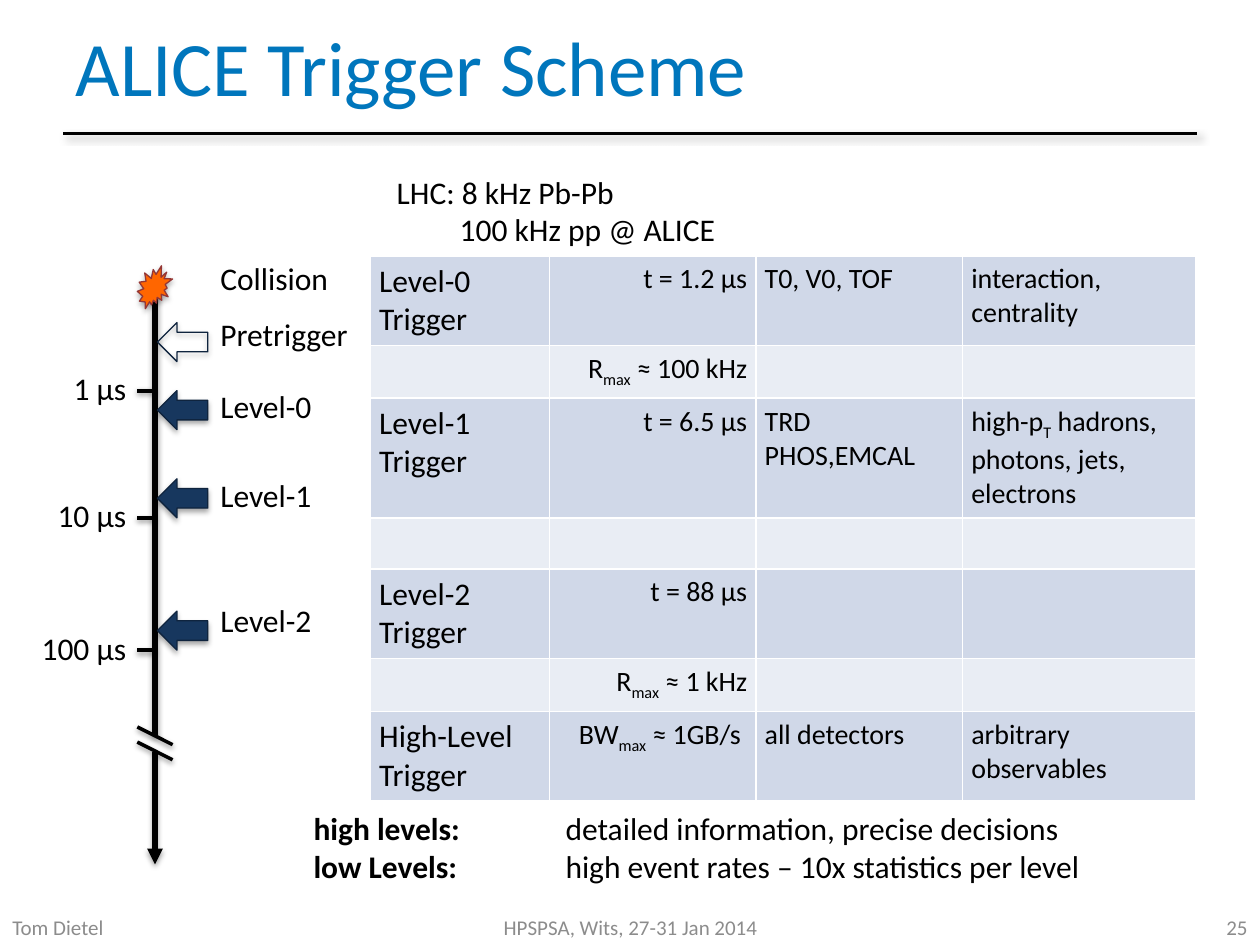
"""Build the ALICE trigger scheme slide with a timeline and a level table."""
from lxml.etree import SubElement
from pptx import Presentation
from pptx.dml.color import RGBColor
from pptx.enum.shapes import MSO_CONNECTOR, MSO_SHAPE
from pptx.enum.text import MSO_ANCHOR, MSO_AUTO_SIZE, PP_ALIGN
from pptx.oxml.ns import qn
from pptx.util import Inches, Pt

LEFT, CENTER, RIGHT = PP_ALIGN.LEFT, PP_ALIGN.CENTER, PP_ALIGN.RIGHT
BLACK, GRAY, BLUE, NAVY, WHITE = "000000", "8C8C8C", "0076BC", "17375E", "FFFFFF"
BANDS = ("D0D8E8", "E9EDF4")
SUBSCRIPT, BOLD = "subscript", "bold"
LINE_SHADOW = (38, 3.1, 1.6, 90)
SHAPE_SHADOW = (35, 3.1, 1.8, 90)
RULE_SHADOW = (40, 4, 3, 45)

COLUMNS = (1.42, 1.64, 1.64, 1.85)
ROWS = (0.65, 0.42, 0.95, 0.37, 0.65, 0.42, 0.67)
CELLS = (
    ("Level-0 Trigger", " t = 1.2 μs", "T0, V0, TOF", "interaction,\vcentrality"),
    ("", "R_max_ ≈ 100 kHz", "", ""),
    ("Level-1 Trigger", "t = 6.5 μs", "TRD\nPHOS,EMCAL",
     "high-p_T_ hadrons, photons, jets,\nelectrons"),
    ("", "", "", ""),
    ("Level-2 Trigger", "t = 88 μs", "", ""),
    ("", "R_max_ ≈ 1 kHz", "", ""),
    ("High-Level Trigger", "BW_max_ ≈ 1GB/s ", "all detectors", "arbitrary observables"),
)
AXIS, TICK = 1.23, 0.14
TICKS = (("1 μs", 3.1), ("10 μs", 4.11), ("100 μs", 5.16))
ARROWS = ((3.1, NAVY), (2.56, None), (3.8, NAVY), (4.85, NAVY))
EVENTS = (("Collision", 2.01), ("Level-2", 4.72), ("Level-0", 3.02),
          ("Level-1", 3.73), ("Pretrigger", 2.45))
FOOTERS = (
    ("HPSPSA, Wits, 27-31 Jan 2014", (1.82, 7.22, 6.37, 0.27), CENTER),
    ("Tom Dietel", (0, 7.22, 1.7, 0.28), LEFT),
    ("25", (8.55, 7.22, 1.45, 0.27), RIGHT),
)


def color(code):
    """Turn a hex string into a colour."""
    return RGBColor.from_string(code)


def assign(target, values):
    """Set each named attribute on the target."""
    for name, value in values.items():
        setattr(target, name, value)


class Painter:
    """Hold the style and the current slide, and draw each kind of element."""

    font = "Calibri"

    def __init__(self, page):
        """Start drawing directly on the page."""
        self.page = page
        self.shapes = page.shapes

    def group(self):
        """Send the elements that follow into a new group."""
        self.shapes = self.page.shapes.add_group_shape().shapes

    def ungroup(self):
        """Send the elements that follow to the page."""
        self.shapes = self.page.shapes

    def fill_text(self, frame, text, size=18, ink=BLACK, align=LEFT, accent=BOLD, tabs=()):
        """Fill a frame, giving the accent to the parts between underscores."""
        for index, line in enumerate(text.split("\n")):
            para = frame.paragraphs[0] if index == 0 else frame.add_paragraph()
            para.alignment = align
            if tabs:
                stops = SubElement(para._p.get_or_add_pPr(), qn("a:tabLst"))
                for stop in tabs:
                    SubElement(stops, qn("a:tab"), pos=str(Inches(stop)), algn="l")
            for order, piece in enumerate(line.split("_")):
                for part_index, part in enumerate(piece.split("\v")):
                    if part_index:
                        para.add_line_break()
                    if part:
                        span = para.add_run()
                        span.text = part
                        assign(span.font, {"name": self.font, "size": Pt(size)})
                        span.font.color.rgb = color(ink)
                        if order % 2 and accent == BOLD:
                            span.font.bold = True
                        elif order % 2:
                            span.font._element.set("baseline", "-25000")

    def shadow(self, item, look):
        """Give an item an outer shadow."""
        alpha, blur, distance, angle = look
        effects = SubElement(item._element.spPr, qn("a:effectLst"))
        outer = SubElement(effects, qn("a:outerShdw"), blurRad=str(Pt(blur)),
                           dist=str(Pt(distance)), dir=str(angle * 60000), rotWithShape="0")
        ink = SubElement(outer, qn("a:srgbClr"), val=BLACK)
        SubElement(ink, qn("a:alpha"), val=str(alpha * 1000))

    def title(self, text, place):
        """Place and fill the title placeholder."""
        box = self.page.shapes.title
        assign(box, dict(zip(("left", "top", "width", "height"), map(Inches, place))))
        box.text_frame.vertical_anchor = MSO_ANCHOR.MIDDLE
        self.fill_text(box.text_frame, text, 44, BLUE)

    def text(self, text, place, grow=True, **style):
        """Add a wrapped text box."""
        frame = self.shapes.add_textbox(*map(Inches, place)).text_frame
        assign(frame, {
            "word_wrap": True,
            "auto_size": MSO_AUTO_SIZE.SHAPE_TO_FIT_TEXT if grow else MSO_AUTO_SIZE.NONE,
            "vertical_anchor": MSO_ANCHOR.TOP if grow else MSO_ANCHOR.MIDDLE,
        })
        self.fill_text(frame, text, **style)

    def line(self, start, end, width, look=LINE_SHADOW, arrow=False):
        """Add a black line, with an arrowhead at its end if asked."""
        line = self.shapes.add_connector(MSO_CONNECTOR.STRAIGHT, *map(Inches, start + end))
        line.line.width = Pt(width)
        line.line.color.rgb = color(BLACK)
        if arrow:
            SubElement(line.line._get_or_add_ln(), qn("a:tailEnd"), type="triangle")
        self.shadow(line, look)

    def shape(self, kind, place, fill, outline):
        """Add a preset shape, unfilled when the fill is None."""
        shape = self.shapes.add_shape(kind, *map(Inches, place))
        if fill:
            shape.fill.solid()
            shape.fill.fore_color.rgb = color(fill)
        else:
            shape.fill.background()
        shape.line.color.rgb = color(outline)
        shape.line.width = Pt(0.75)
        self.shadow(shape, SHAPE_SHADOW)

    def table(self, cells, place, columns, rows):
        """Add a table with banded fills and white borders."""
        table = self.shapes.add_table(len(rows), len(columns), *map(Inches, place)).table
        assign(table, {"first_row": False, "horz_banding": False})
        for column, width in zip(table.columns, columns):
            column.width = Inches(width)
        for row_index, (row, height) in enumerate(zip(table.rows, rows)):
            row.height = Inches(height)
            for index, cell in enumerate(row.cells):
                assign(cell, {"margin_left": Inches(0.07), "margin_right": Inches(0.07),
                              "margin_top": Inches(0.05), "margin_bottom": Inches(0.05)})
                self.border(cell)
                cell.fill.solid()
                cell.fill.fore_color.rgb = color(BANDS[row_index % 2])
                self.fill_text(cell.text_frame, cells[row_index][index], 16 if index else 18,
                               align=RIGHT if index == 1 else LEFT, accent=SUBSCRIPT)

    def border(self, cell):
        """Draw a white border on each side of a cell."""
        for side in ("L", "R", "T", "B"):
            edge = SubElement(cell._tc.get_or_add_tcPr(), qn(f"a:ln{side}"), w=str(Pt(1)))
            SubElement(SubElement(edge, qn("a:solidFill")), qn("a:srgbClr"), val=WHITE)


def draw_timeline(painter):
    """Draw the time axis with its ticks, arrows and labels."""
    painter.group()
    painter.line((AXIS, 2.28), (AXIS, 5.83), 3)
    painter.line((AXIS, 5.97), (AXIS, 6.86), 3, arrow=True)
    for top in (5.77, 5.89):
        painter.line((AXIS - TICK, top), (AXIS + TICK, top + 0.14), 2)
    painter.shape(MSO_SHAPE.EXPLOSION2, (1.09, 2.11, 0.28, 0.34), "FF6600", "953735")
    for label, height in TICKS:
        painter.line((AXIS, height), (AXIS - TICK, height), 2.25)
        painter.text(label, (0.19, height - 0.22, 0.91, 0.4), align=RIGHT)
    for top, fill in ARROWS:
        painter.shape(MSO_SHAPE.LEFT_ARROW, (1.25, top, 0.4, 0.31), fill, "0F243E")
    for label, top in EVENTS:
        painter.text(label, (1.65, top, 1.29, 0.4))
    painter.ungroup()


def main():
    """Build and save the slide."""
    deck = Presentation()
    assign(deck, {"slide_width": Inches(10), "slide_height": Inches(7.5)})
    painter = Painter(deck.slides.add_slide(deck.slide_layouts[5]))
    painter.line((0.5, 1.06), (9.5, 1.06), 1.5, RULE_SHADOW)
    painter.title("ALICE Trigger Scheme", (0.5, 0, 9, 1.05))
    painter.table(CELLS, (2.94, 2.03, 6.56, 4.3), COLUMNS, ROWS)
    draw_timeline(painter)
    painter.text("_high levels: _\t\tdetailed information, precise decisions\n"
                 "_low Levels:_\t\thigh event rates – 10x statistics per level",
                 (2.39, 6.37, 7.33, 0.71), tabs=(1.5, 2))
    painter.text("LHC: 8 kHz Pb-Pb\n\t100 kHz pp @ ALICE", (3.05, 1.32, 6.45, 0.71), tabs=(0.5,))
    for label, place, align in FOOTERS:
        painter.text(label, place, grow=False, size=12, ink=GRAY, align=align)
    deck.save("out.pptx")


if __name__ == "__main__":
    main()
